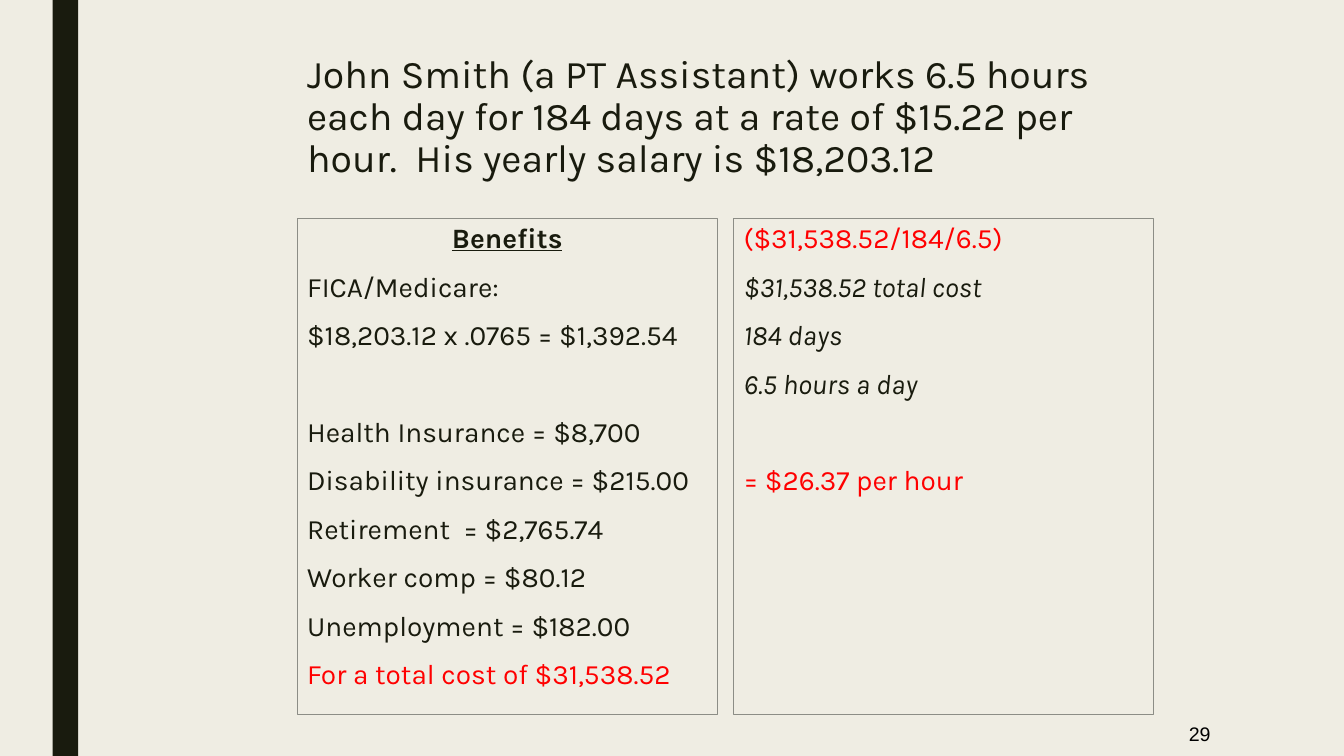
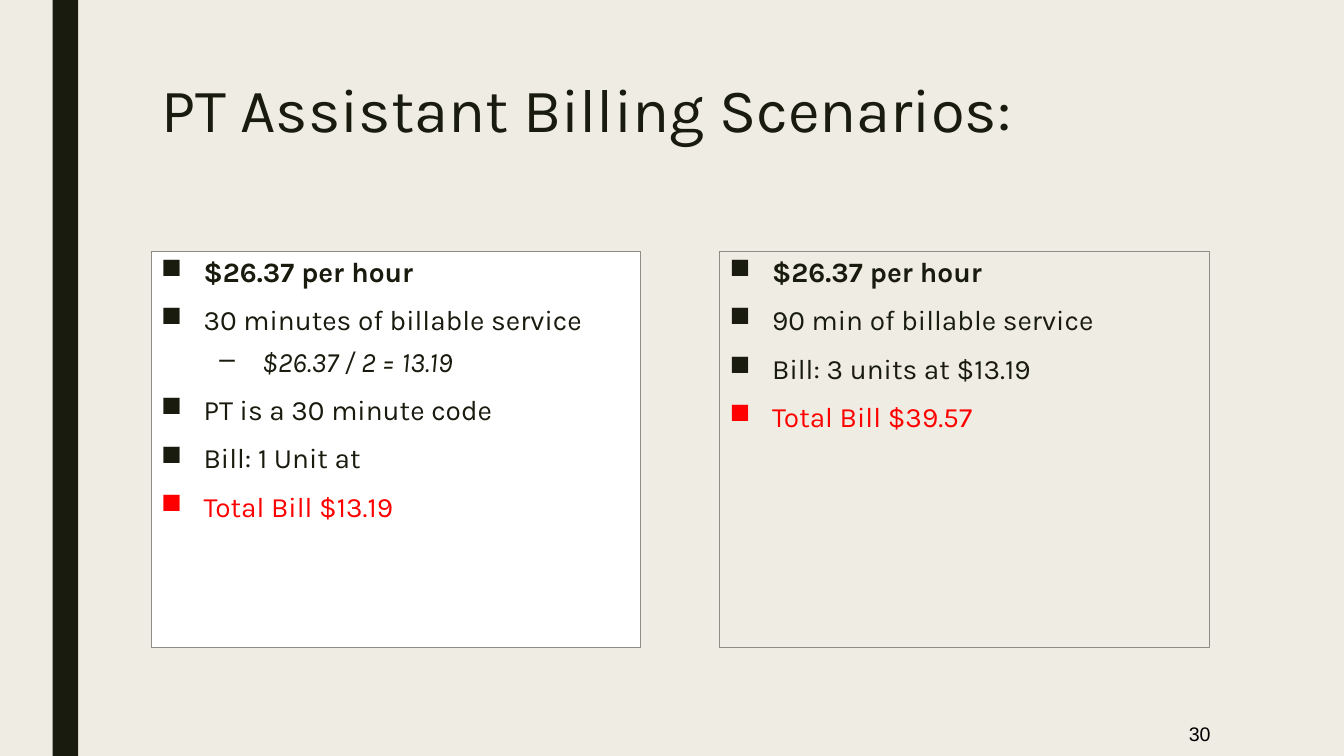
from dataclasses import dataclass

from lxml.etree import SubElement
from pptx import Presentation
from pptx.dml.color import RGBColor
from pptx.enum.shapes import MSO_SHAPE
from pptx.enum.text import MSO_ANCHOR, PP_ALIGN
from pptx.oxml.ns import qn
from pptx.util import Cm, Pt


@dataclass(frozen=True)
class Theme:
    paper = RGBColor.from_string("EFEDE3")
    ink = RGBColor.from_string("191B0E")
    accent = RGBColor.from_string("FF0000")
    border = RGBColor.from_string("8C8D86")
    white = RGBColor.from_string("FFFFFF")
    black = RGBColor.from_string("000000")
    font = "Karla"
    number_font = "Arial"
    body_size = Pt(20)
    number_size = Pt(14)
    title_spacing = 0.89
    body_spacing = 0.94
    before = Pt(10)
    before_sub = Pt(5)
    before_gap = Pt(44.6)  # one skipped line
    after = Pt(2)


theme = Theme()


def add_run(paragraph, text, size, color=theme.ink, font=theme.font):
    run = paragraph.add_run()
    run.text = text
    run.font.name, run.font.size = font, size
    run.font.color.rgb = color
    return run


def set_bullet(paragraph, symbol, left):
    """Hang the paragraph's text at left, with the symbol in front."""
    properties = paragraph._p.get_or_add_pPr()
    properties.set("marL", str(left))
    properties.set("indent", str(-Cm(1.07)))
    SubElement(properties, qn("a:buChar")).set("char", symbol)


# Each line is its text and the marks that style it:
# b bold, i italic, u underlined, c centred, r red, g gap above, s sub-item
slides = [
    {
        "number": "29",
        "title": "John Smith (a PT Assistant) works 6.5 hours each day for 184 days "
                 "at a rate of $15.22 per hour.  His yearly salary is $18,203.12",
        "title_size": Pt(28),
        "title_box": (7.49, 1.27, 21.59, 3.61),
        "bulleted": False,
        "panel_top": 5.51,
        "panel_size": (10.59, 12.5),
        "panels": [
            (7.49, None, [
                ("Benefits", "buc"),
                ("FICA/Medicare:", ""),
                ("$18,203.12 x .0765 = $1,392.54", ""),
                ("Health Insurance = $8,700", "g"),
                ("Disability insurance = $215.00", ""),
                ("Retirement  = $2,765.74", ""),
                ("Worker comp = $80.12", ""),
                ("Unemployment = $182.00", ""),
                ("For a total cost of $31,538.52", "r"),
            ]),
            (18.49, None, [
                ("($31,538.52/184/6.5)", "r"),
                ("$31,538.52 total cost", "i"),
                ("184 days", "i"),
                ("6.5 hours a day", "i"),
                ("= $26.37 per hour", "rg"),
            ]),
        ],
    },
    {
        "number": "30",
        "title": "PT Assistant Billing Scenarios:",
        "title_size": Pt(44),
        "title_box": (3.81, 1.9, 26.67, 4.11),
        "bulleted": True,
        "panel_top": 6.35,
        "panel_size": (12.34, 9.96),
        "panels": [
            (3.81, theme.white, [
                ("$26.37 per hour", "b"),
                ("30 minutes of billable service", ""),
                ("$26.37 / 2 = 13.19", "is"),
                ("PT is a 30 minute code", ""),
                ("Bill: 1 Unit at", ""),
                ("Total Bill $13.19", "r"),
            ]),
            (18.14, None, [
                ("$26.37 per hour", "b"),
                ("90 min of billable service", ""),
                ("Bill: 3 units at $13.19", ""),
                ("Total Bill $39.57", "r"),
            ]),
        ],
    },
]

prs = Presentation()
prs.slide_width, prs.slide_height = Cm(33.87), Cm(19.05)
blank = prs.slide_layouts[6]

background = prs.slide_master.background.fill
background.solid()
background.fore_color.rgb = theme.paper

for content in slides:
    slide = prs.slides.add_slide(blank)

    if len(prs.slides) == 1:
        # The side band is drawn once and moved to the master
        band = slide.shapes.add_shape(
            MSO_SHAPE.RECTANGLE, Cm(1.33), 0, Cm(0.64), prs.slide_height)
        band.shadow.inherit = False
        band.fill.solid()
        band.fill.fore_color.rgb = theme.ink
        band.line.fill.background()
        prs.slide_master.shapes.element.insert(2, band.element)

    title = slide.shapes.add_textbox(*map(Cm, content["title_box"])).text_frame
    title.word_wrap = True
    heading = title.paragraphs[0]
    heading.line_spacing = theme.title_spacing
    add_run(heading, content["title"], content["title_size"])

    for left, fill, lines in content["panels"]:
        panel = slide.shapes.add_shape(
            MSO_SHAPE.RECTANGLE, Cm(left), Cm(content["panel_top"]),
            *map(Cm, content["panel_size"]))
        panel.shadow.inherit = False
        panel.line.color.rgb = theme.border
        panel.line.width = Pt(0.75)
        if fill is None:
            panel.fill.background()
        else:
            panel.fill.solid()
            panel.fill.fore_color.rgb = fill

        body = panel.text_frame
        body.word_wrap = True
        body.vertical_anchor = MSO_ANCHOR.TOP
        for index, (text, marks) in enumerate(lines):
            line = body.add_paragraph() if index else body.paragraphs[0]
            line.alignment = PP_ALIGN.CENTER if "c" in marks else PP_ALIGN.LEFT
            line.line_spacing = theme.body_spacing
            line.space_before = (theme.before_gap if "g" in marks
                                 else theme.before_sub if "s" in marks
                                 else theme.before)
            line.space_after = theme.after
            if "s" in marks:
                line.level = 1
                set_bullet(line, "–", Cm(2.54))
            elif content["bulleted"]:
                set_bullet(line, "■", Cm(1.07))
            run = add_run(line, text, theme.body_size,
                          theme.accent if "r" in marks else theme.ink)
            run.font.bold = "b" in marks
            run.font.italic = "i" in marks
            run.font.underline = "u" in marks

    footer = slide.shapes.add_textbox(Cm(26.31), Cm(17.93), Cm(4.45), Cm(1.12)).text_frame
    footer.word_wrap = True
    footer.vertical_anchor = MSO_ANCHOR.MIDDLE
    footer.paragraphs[0].alignment = PP_ALIGN.RIGHT
    add_run(footer.paragraphs[0], content["number"], theme.number_size,
            theme.black, theme.number_font)

prs.save("out.pptx")
